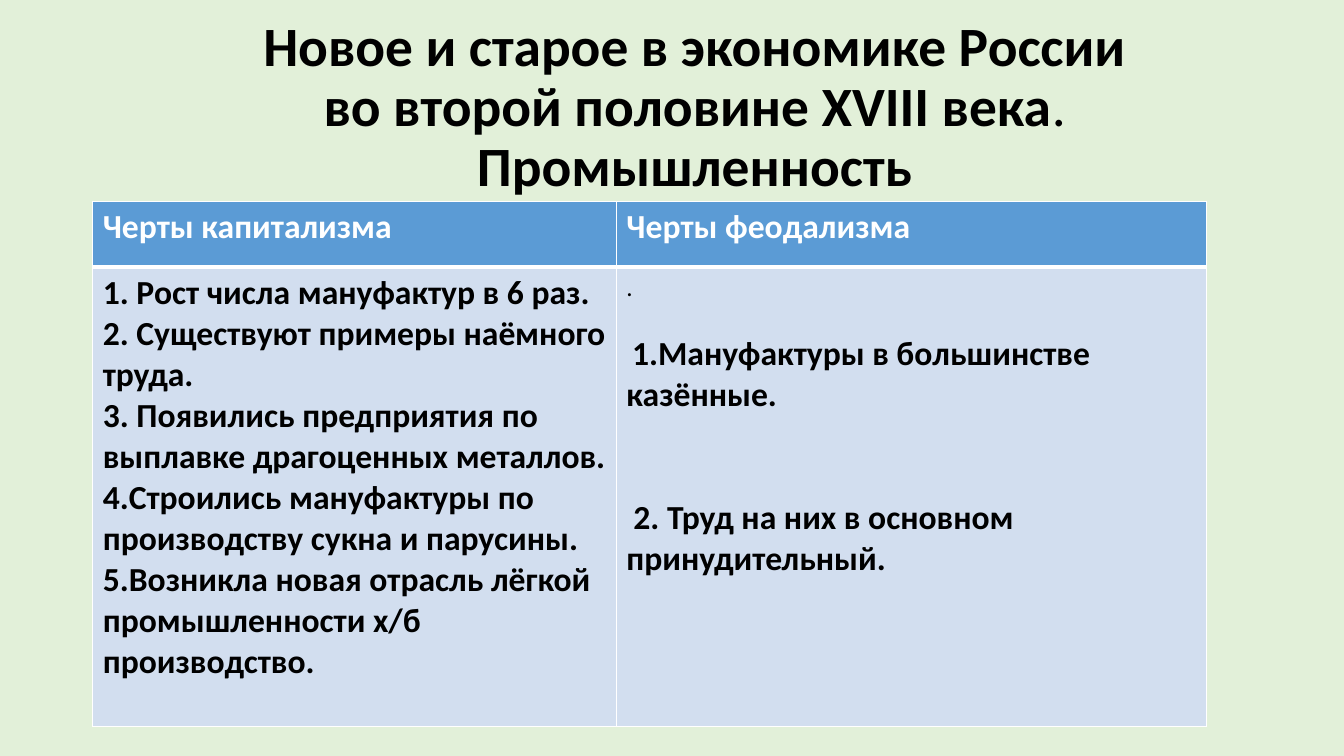
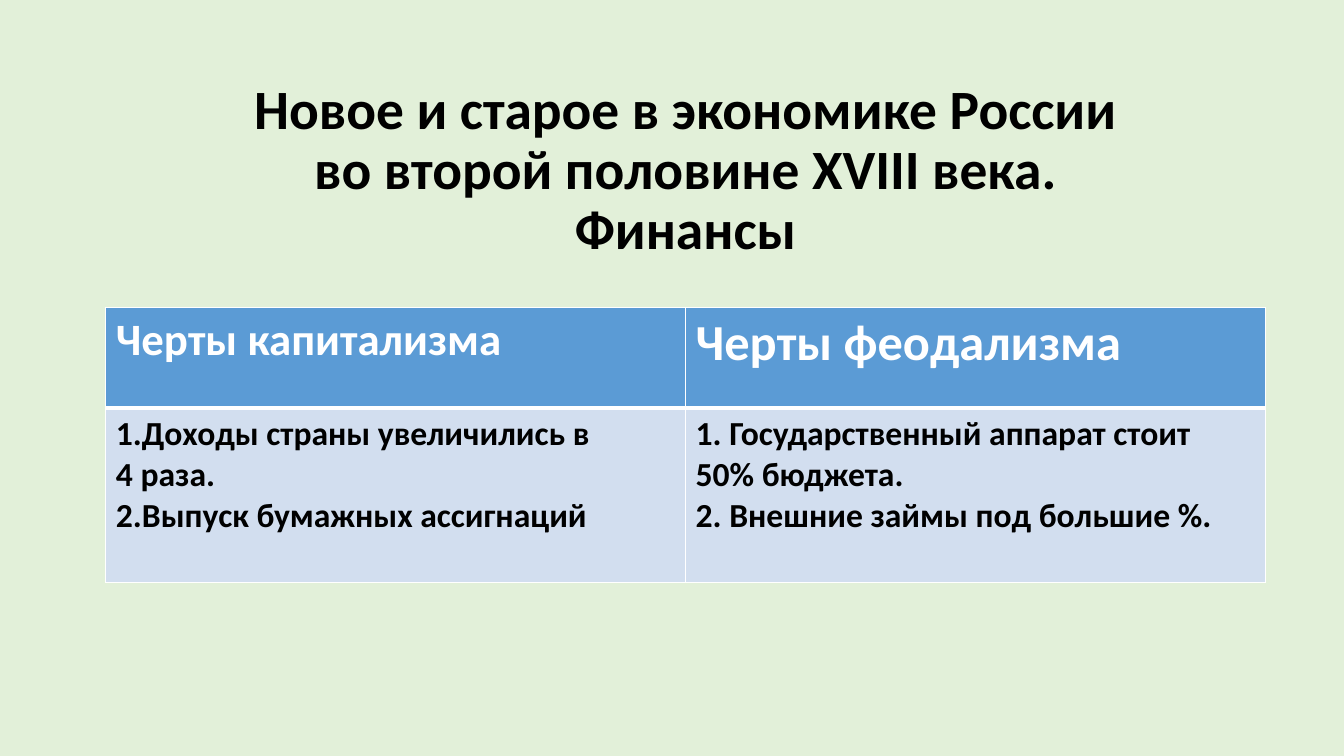
from dataclasses import dataclass

from lxml import etree
from pptx import Presentation
from pptx.dml.color import RGBColor
from pptx.enum.text import MSO_ANCHOR, MSO_AUTO_SIZE, PP_ALIGN
from pptx.oxml.ns import qn
from pptx.util import Inches, Pt

MIDDLE = MSO_ANCHOR.MIDDLE
NO_FIT = MSO_AUTO_SIZE.NONE
CENTER = PP_ALIGN.CENTER
TITLE_ONLY = 5


@dataclass(frozen=True)
class Theme:
    font: str = "Calibri"
    back: str = "E2F0D9"
    ink: str = "000000"
    white: str = "FFFFFF"
    head: str = "5B9BD5"
    body: str = "D2DEEF"
    title: float = 39.6
    text: float = 24
    small: float = 18
    thin: float = 1
    thick: float = 3
    lead: float = 0.9


THEME = Theme()


@dataclass(frozen=True)
class Item:
    """One paragraph of a cell; before and indent are in points."""
    text: str
    size: float = THEME.text
    bold: bool = True
    before: float = 0
    indent: float = 0


def add_run(para, text, size, color, bold=True):
    run = para.add_run()
    run.text = text
    font = run.font
    font.name, font.size, font.bold = THEME.font, Pt(size), bold
    font.color.rgb = RGBColor.from_string(color)


def add_title(slide, box, lines):
    """Fill the title; each line is a list of (text, bold) runs."""
    title = slide.shapes.title
    title.left, title.top, title.width, title.height = map(Inches, box)
    frame = title.text_frame
    frame.word_wrap = True
    frame.auto_size = NO_FIT
    frame.vertical_anchor = MIDDLE
    para = frame.paragraphs[0]
    para.alignment = CENTER
    para.line_spacing = THEME.lead
    for row, line in enumerate(lines):
        if row:
            para.add_line_break()
        for text, bold in line:
            add_run(para, text, THEME.title, THEME.ink, bold)


def set_edges(cell, top, bottom):
    props = cell._tc.get_or_add_tcPr()
    edges = {"L": THEME.thin, "R": THEME.thin, "T": top, "B": bottom}
    for spot, (side, width) in enumerate(edges.items()):
        line = etree.Element(qn(f"a:ln{side}"), w=str(Pt(width)))
        fill = etree.SubElement(line, qn("a:solidFill"))
        etree.SubElement(fill, qn("a:srgbClr"), val=THEME.white)
        props.insert(spot, line)


def fill_cell(cell, items, fill, color):
    cell.fill.solid()
    cell.fill.fore_color.rgb = RGBColor.from_string(fill)
    frame = cell.text_frame
    for row, item in enumerate(items):
        para = frame.add_paragraph() if row else frame.paragraphs[0]
        if item.indent:
            props = para._p.get_or_add_pPr()
            props.set("marL", "0")
            props.set("indent", str(Pt(item.indent)))
        if item.before:
            para.space_before = Pt(item.before)
        add_run(para, item.text, item.size, color, item.bold)


def add_grid(slide, box, split, rows, heads, lists):
    """Two-column table; split is the first column's share of the width."""
    left, top, width, height = map(Inches, box)
    table = slide.shapes.add_table(2, 2, left, top, width, height).table
    table.horz_banding = False
    for col, share in zip(table.columns, (split, 1 - split)):
        col.width = int(width * share)
    for row, tall in zip(table.rows, rows):
        row.height = Inches(tall)
    for col, (head, items) in enumerate(zip(heads, lists)):
        top_cell, low_cell = table.cell(0, col), table.cell(1, col)
        fill_cell(top_cell, [head], THEME.head, THEME.white)
        fill_cell(low_cell, items, THEME.body, THEME.ink)
        set_edges(top_cell, THEME.thin, THEME.thick)
        set_edges(low_cell, THEME.thick, THEME.thin)


def add_page(deck, topic, stop_bold, spot, box, split, rows, sizes, lists):
    """One slide: shared title with its topic, and the table of features."""
    slide = deck.slides.add_slide(deck.slide_layouts[TITLE_ONLY])
    add_title(slide, (*spot, 11.5, 1.45), [
        [("Новое и старое в экономике России", True)],
        [("во второй половине XVIII века", True), (".", stop_bold)],
        [(topic, True)],
    ])
    names = ("Черты капитализма", "Черты феодализма")
    heads = [Item(name, size) for name, size in zip(names, sizes)]
    add_grid(slide, box, split, rows, heads, lists)


def main():
    deck = Presentation()
    deck.slide_width, deck.slide_height = Inches(13.33), Inches(7.5)
    back = deck.slide_master.background.fill
    back.solid()
    back.fore_color.rgb = RGBColor.from_string(THEME.back)

    add_page(
        deck, "Промышленность", False, (1.14, 0.35),
        (0.92, 2, 11.05, 5.21), 0.47, (0.65, 4.56), (24, 24),
        (
            [
                Item("1. Рост числа мануфактур в 6 раз."),
                Item("2. Существуют примеры наёмного труда."),
                Item("3. Появились предприятия по выплавке "
                     "драгоценных металлов."),
                Item("4.Строились мануфактуры по производству "
                     "сукна и парусины."),
                Item("5.Возникла новая отрасль лёгкой "
                     "промышленности х/б производство."),
            ],
            [
                Item(".", THEME.small, False),
                Item("1.Мануфактуры в большинстве казённые.",
                     before=22, indent=4),
                Item("2. Труд на них в основном принудительный.",
                     before=58.5, indent=5),
            ],
        ),
    )
    add_page(
        deck, "Финансы", True, (1.05, 0.98),
        (1.05, 3.05, 11.5, 2.73), 0.5, (1, 1.73), (32, 36),
        (
            [
                Item("1.Доходы страны увеличились в"),
                Item("4 раза."),
                Item("2.Выпуск бумажных ассигнаций"),
            ],
            [
                Item("1. Государственный аппарат стоит 50% бюджета."),
                Item("2. Внешние займы под большие %."),
            ],
        ),
    )
    deck.save("out.pptx")


if __name__ == "__main__":
    main()
